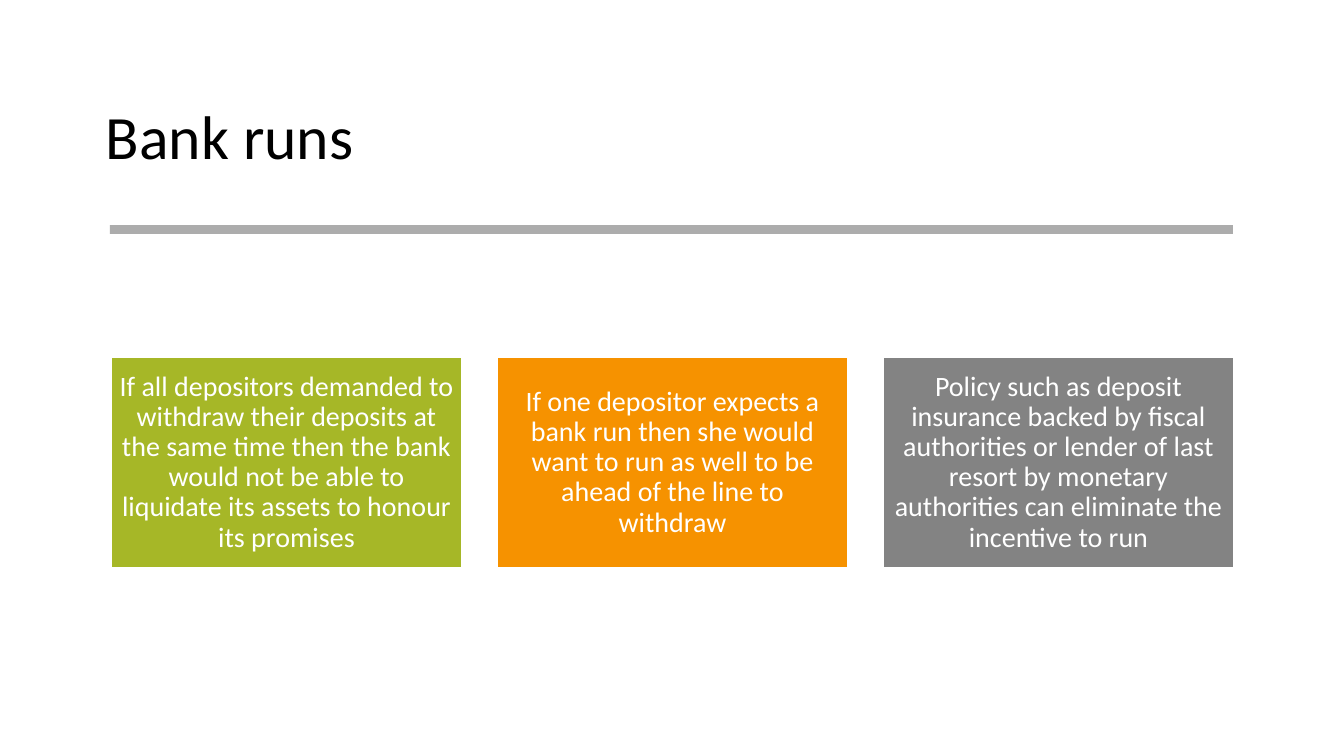
"""Build the "Bank runs" slide with a title, a divider and three cards."""
from lxml import etree
from pptx import Presentation
from pptx import util as u
from pptx.dml.color import RGBColor
from pptx.enum import shapes, text
from pptx.oxml.ns import qn

PX = 914400 / 100.8
SLIDE_WIDTH, SLIDE_HEIGHT = 1344, 756
CARD_LEFT, CARD_TOP, CARD_WIDTH, CARD_HEIGHT = 111, 357, 351, 211
CARD_STEP = 386
CARDS = [
    ("A6B727", "If all depositors demanded to withdraw their deposits at the same time "
               "then the bank would not be able to liquidate its assets to honour its promises"),
    ("F69200", "If one depositor expects a bank run then she would want to run as well "
               "to be ahead of the line to withdraw"),
    ("838383", "Policy such as deposit insurance backed by fiscal authorities or lender of "
               "last resort by monetary authorities can eliminate the incentive to run"),
]


def box(px):
    return [round(length * PX) for length in px]


def write(shape, words, size, colour, alignment, inset):
    frame = shape.text_frame
    frame_format = {"word_wrap": True, "vertical_anchor": text.MSO_ANCHOR.MIDDLE}
    for side in ("left", "right", "top", "bottom"):
        frame_format["margin_" + side] = round(inset * PX)
    for name, value in frame_format.items():
        setattr(frame, name, value)
    paragraph = frame.paragraphs[0]
    paragraph.text = words
    paragraph.alignment = alignment
    paragraph.line_spacing = 0.9
    font = paragraph.runs[0].font
    for name, value in {"name": "Calibri", "size": u.Pt(size)}.items():
        setattr(font, name, value)
    font.color.rgb = RGBColor.from_string(colour)


presentation = Presentation()
presentation.slide_width, presentation.slide_height = box((SLIDE_WIDTH, SLIDE_HEIGHT))
slide = presentation.slides.add_slide(presentation.slide_layouts[6])

title = slide.shapes.add_textbox(*box((96, 67, 1152, 146)))
write(title, "Bank runs", 44, "000000", text.PP_ALIGN.LEFT, 10)

divider = slide.shapes.add_shape(shapes.MSO_SHAPE.RECTANGLE, *box((110, 225, 1123, 9)))
divider.shadow.inherit = False
divider.fill.solid()
divider.fill.fore_color.rgb = RGBColor.from_string("808080")
divider.line.fill.background()
divider_colour = divider.fill._xPr.find(qn("a:solidFill"))[0]
etree.SubElement(divider_colour, qn("a:alpha"), val="65000")

for index, (colour, words) in enumerate(CARDS):
    left = CARD_LEFT + index * CARD_STEP
    card = slide.shapes.add_shape(shapes.MSO_SHAPE.RECTANGLE,
                                  *box((left, CARD_TOP, CARD_WIDTH, CARD_HEIGHT)))
    card.shadow.inherit = False
    card.fill.solid()
    card.fill.fore_color.rgb = RGBColor.from_string(colour)
    card.line.color.rgb = RGBColor.from_string("FFFFFF")
    card.line.width = u.Pt(1)
    write(card, words, 20, "FFFFFF", text.PP_ALIGN.CENTER, 8)

presentation.save("out.pptx")
